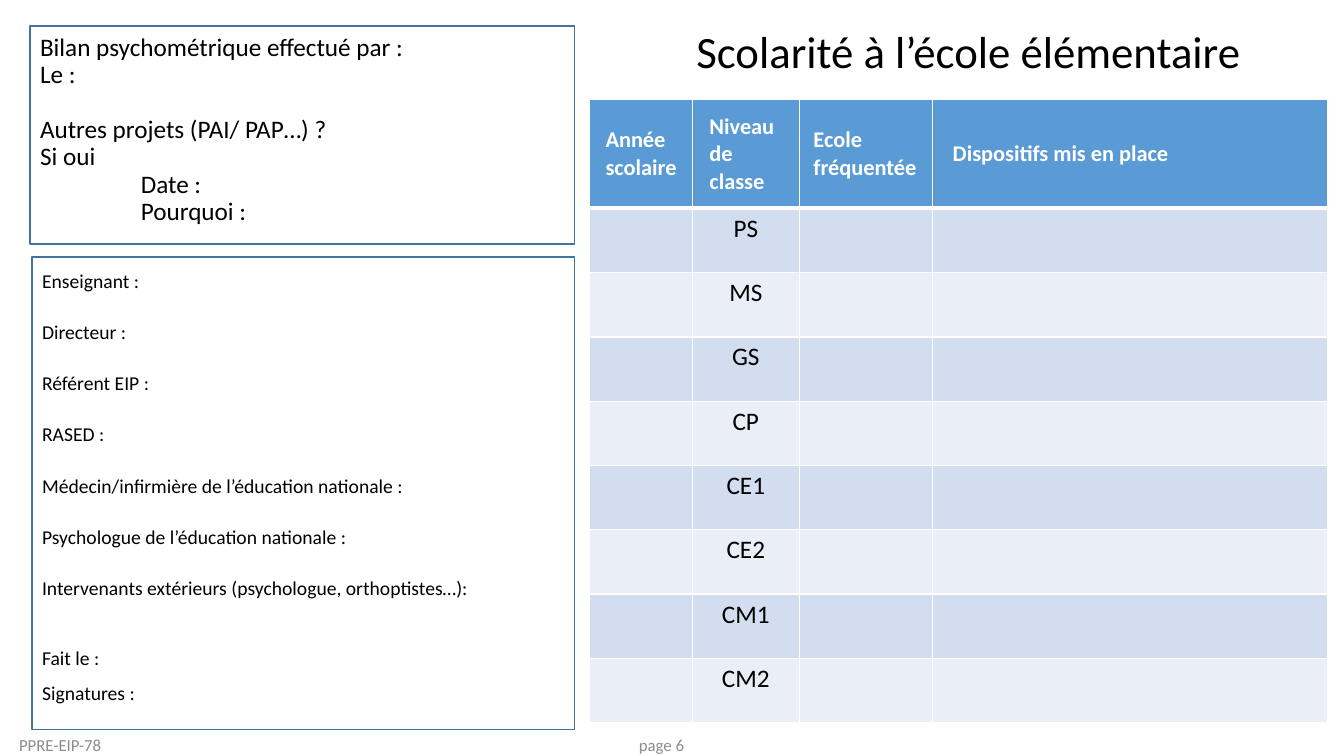
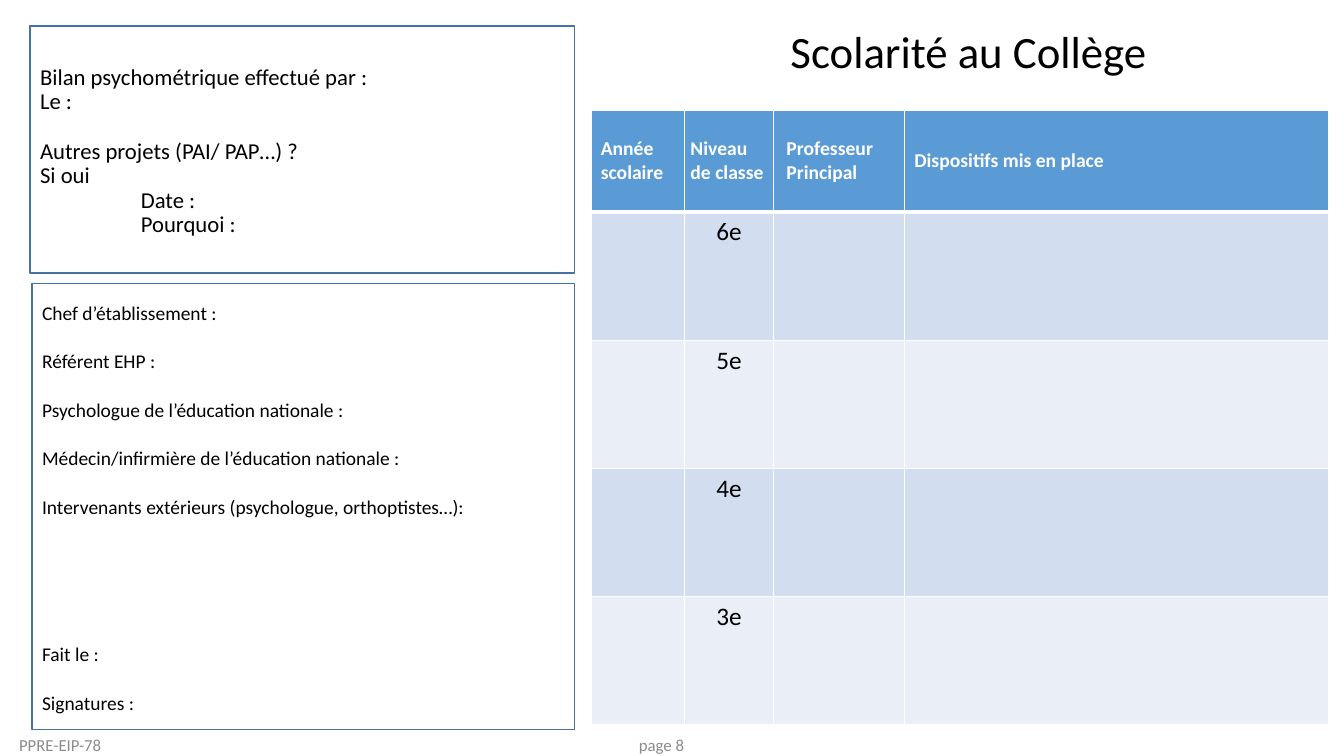
from dataclasses import dataclass

from lxml.etree import SubElement
from pptx import Presentation
from pptx.dml.color import RGBColor
from pptx.enum.shapes import MSO_SHAPE
from pptx.enum.text import MSO_ANCHOR, MSO_AUTO_SIZE, PP_ALIGN
from pptx.oxml.ns import qn
from pptx.util import Cm, Pt


@dataclass(frozen=True)
class Theme:
    font: str = "Calibri"
    text: str = "000000"
    header: str = "5B9BD5"
    header_text: str = "FFFFFF"
    bands: tuple = ("D2DEEF", "EAEFF7")
    grid: str = "FFFFFF"
    outline: str = "43739E"
    footer: str = "8C8C8C"
    heading_size: float = 32
    level_size: float = 18
    footer_size: float = 12


class Deck:
    def __init__(self, theme):
        self.theme = theme
        self.presentation = Presentation()
        self.presentation.slide_width = Cm(33.87)
        self.presentation.slide_height = Cm(19.05)
        self.slide = None

    def style(self, paragraph, size, color=None, bold=False):
        font = paragraph.font
        font.name, font.size, font.bold = self.theme.font, Pt(size), bold
        font.color.rgb = RGBColor.from_string(color or self.theme.text)

    def start(self, heading):
        layout = self.presentation.slide_layouts[5]
        self.slide = self.presentation.slides.add_slide(layout)
        title = self.slide.shapes.title
        title.left, title.top = Cm(15.42), Cm(0.61)
        title.width, title.height = Cm(17.98), Cm(1.52)
        frame = title.text_frame
        frame.auto_size = MSO_AUTO_SIZE.NONE
        frame.vertical_anchor = MSO_ANCHOR.MIDDLE
        frame.text = heading
        paragraph = frame.paragraphs[0]
        paragraph.alignment = PP_ALIGN.CENTER
        paragraph.line_spacing = 0.9
        self.style(paragraph, self.theme.heading_size)

    def panel(self, left, top, width, bottom, anchor, inset):
        panel = self.slide.shapes.add_shape(
            MSO_SHAPE.RECTANGLE, Cm(left), Cm(top), Cm(width), Cm(bottom - top))
        panel.shadow.inherit = False
        panel.fill.background()
        panel.line.color.rgb = RGBColor.from_string(self.theme.outline)
        panel.line.width = Pt(1)
        frame = panel.text_frame
        frame.word_wrap = True
        frame.vertical_anchor = anchor
        frame.margin_top = frame.margin_bottom = Cm(inset)
        return frame

    def lines(self, frame, entries, size, line_spacing):
        for number, (text, space_before, indent) in enumerate(entries):
            paragraph = frame.add_paragraph() if number else frame.paragraphs[0]
            paragraph.text = text
            paragraph.alignment = PP_ALIGN.LEFT
            paragraph.line_spacing = line_spacing
            paragraph.space_before = Pt(space_before)
            if indent:
                paragraph._p.get_or_add_pPr().set("marL", str(Cm(indent)))
            self.style(paragraph, size)

    def assessment(self, bottom, size, inset):
        frame = self.panel(0.76, 0.66, 13.72, bottom, MSO_ANCHOR.BOTTOM, inset)
        entries = [
            ("Bilan psychométrique effectué par :", 0, 0),
            ("Le :", 0, 0),
            ("Autres projets (PAI/ PAP…) ?", size * 1.1, 0),
            ("Si oui", 0, 0),
            ("Date :", 0, 2.54),
            ("Pourquoi :", 0, 2.54),
        ]
        self.lines(frame, entries, size, 0.9)

    def signatories(self, top, size, inset, people, gap, date_gap, sign_gap):
        frame = self.panel(0.81, top, 13.67, 18.39, MSO_ANCHOR.TOP, inset)
        entries = [(person, gap if number else 0, 0)
                   for number, person in enumerate(people)]
        entries += [("Fait le :", date_gap, 0), ("Signatures :", sign_gap, 0)]
        self.lines(frame, entries, size, 1.0)

    def border(self, cell, top=1, bottom=1):
        properties = cell._tc.get_or_add_tcPr()
        for side, width in (("L", 1), ("R", 1), ("T", top), ("B", bottom)):
            line = SubElement(properties, qn(f"a:ln{side}"), w=str(Pt(width)))
            fill = SubElement(line, qn("a:solidFill"))
            SubElement(fill, qn("a:srgbClr"), val=self.theme.grid)

    def schooling(self, left, top, columns, header_height, level_height,
                  headers, header_size, right_margin, levels):
        theme = self.theme
        height = header_height + level_height * len(levels)
        table = self.slide.shapes.add_table(
            len(levels) + 1, len(columns), Cm(left), Cm(top),
            Cm(sum(columns)), Cm(height)).table
        table.horz_banding = False
        for column, width in zip(table.columns, columns):
            column.width = Cm(width)
        for number, row in enumerate(table.rows):
            row.height = Cm(level_height if number else header_height)
            color = theme.bands[(number - 1) % 2] if number else theme.header
            for cell in row.cells:
                self.border(cell, 3 if number == 1 else 1, 1 if number else 3)
                cell.fill.solid()
                cell.fill.fore_color.rgb = RGBColor.from_string(color)
        for number, (label, margin) in enumerate(headers):
            cell = table.cell(0, number)
            cell.text = label
            cell.vertical_anchor = MSO_ANCHOR.MIDDLE
            cell.margin_left, cell.margin_right = Cm(margin), Cm(right_margin)
            self.style(cell.text_frame.paragraphs[0], header_size,
                       theme.header_text, True)
        for number, level in enumerate(levels, 1):
            cell = table.cell(number, 1)
            cell.text = level
            paragraph = cell.text_frame.paragraphs[0]
            paragraph.alignment = PP_ALIGN.CENTER
            self.style(paragraph, theme.level_size)

    def footer(self, page):
        for text, left in (("PPRE-EIP-78", 0.23), (f"page {page}", 15.85)):
            label = self.slide.shapes.add_textbox(
                Cm(left), Cm(18.5), Cm(5), Cm(0.55))
            frame = label.text_frame
            frame.word_wrap = True
            frame.margin_top = frame.margin_bottom = 0
            frame.vertical_anchor = MSO_ANCHOR.MIDDLE
            frame.text = text
            self.style(frame.paragraphs[0], self.theme.footer_size,
                       self.theme.footer)


def main():
    doctor = "Médecin/infirmière de l’éducation nationale :"
    psychologist = "Psychologue de l’éducation nationale :"
    outside = "Intervenants extérieurs (psychologue, orthoptistes…):"
    deck = Deck(Theme())

    deck.start("Scolarité à l’école élémentaire")
    deck.assessment(bottom=6.15, size=18, inset=0.46)
    deck.signatories(
        top=6.48, size=14, inset=0.3,
        people=["Enseignant :", "Directeur :", "Référent EIP :", "RASED :",
                doctor, psychologist, outside],
        gap=19.7, date_gap=33, sign_gap=8.6)
    deck.schooling(
        left=14.86, top=2.51, columns=(2.59, 2.69, 3.35, 9.96),
        header_height=2.74, level_height=1.62,
        headers=[("Année scolaire", 0.4), ("Niveau de classe", 0.43),
                 ("Ecole fréquentée", 0.36), ("Dispositifs mis en place", 0.52)],
        header_size=16, right_margin=0.25,
        levels=["PS", "MS", "GS", "CP", "CE1", "CE2", "CM1", "CM2"])
    deck.footer(6)

    deck.start("Scolarité au Collège")
    deck.assessment(bottom=6.88, size=16.2, inset=0.89)
    deck.signatories(
        top=7.14, size=13.9, inset=0.44,
        people=["Chef d’établissement :", "Référent EHP :",
                psychologist, doctor, outside],
        gap=18, date_gap=88.7, sign_gap=18)
    deck.schooling(
        left=14.91, top=2.77, columns=(2.34, 2.24, 3.3, 10.69),
        header_height=2.57, level_height=3.23,
        headers=[("Année scolaire", 0.23), ("Niveau de classe", 0.15),
                 ("Professeur Principal", 0.33),
                 ("Dispositifs mis en place", 0.25)],
        header_size=14, right_margin=0.15, levels=["6e", "5e", "4e", "3e"])
    deck.footer(8)

    deck.presentation.save("out.pptx")


if __name__ == "__main__":
    main()
